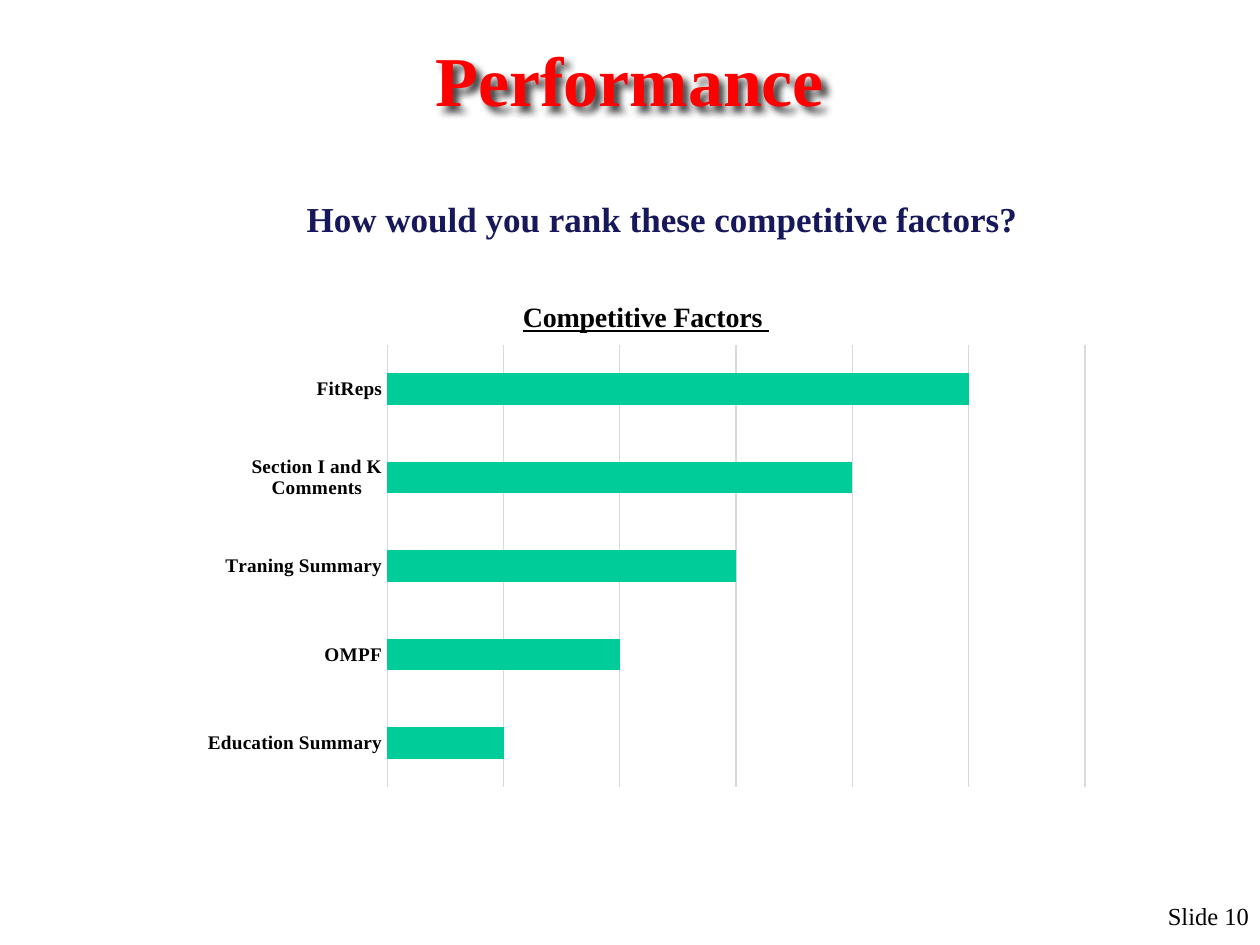
from lxml import etree
from pptx import Presentation
from pptx import util as u
from pptx.chart.data import CategoryChartData
from pptx.dml.color import RGBColor
from pptx.enum import chart as ch, text
from pptx.oxml import parse_xml
from pptx.oxml.ns import nsdecls, qn


def rgb(color):
    return RGBColor.from_string(color)


def set_layout(parent, index, **values):
    """Place a chart part by fractions of the chart's size."""
    for old in parent.findall(qn("c:layout")):
        parent.remove(old)
    layout = parse_xml(f"<c:layout {nsdecls('c')}><c:manualLayout/></c:layout>")
    for name, value in values.items():
        etree.SubElement(layout[0], qn(f"c:{name}")).set("val", str(value))
    parent.insert(index, layout)


class FactorSlide:
    FONT = "Times New Roman"
    BLACK, RED, DARK_RED = "000000", "FF0000", "8E0000"
    NAVY, GREEN, GRID = "17175C", "00CC99", "D9D9D9"

    def __init__(self, prs):
        self.slide = prs.slides.add_slide(prs.slide_layouts[5])

    def style(self, font, size, color, bold=False):
        font.name, font.size, font.bold = self.FONT, u.Pt(size), bold
        font.color.rgb = rgb(color)

    def title(self, wording, box):
        heading = self.slide.shapes.title
        heading.left, heading.top, heading.width, heading.height = map(u.Inches, box)
        frame = heading.text_frame
        frame.text = wording
        frame.vertical_anchor = text.MSO_ANCHOR.MIDDLE
        line = frame.paragraphs[0]
        line.alignment = text.PP_ALIGN.CENTER
        self.style(line.font, 40, self.RED, True)
        # Dark red letter outline and soft shadow
        line.runs[0]._r.get_or_add_rPr().insert(0, parse_xml(
            f'<a:ln {nsdecls("a")} w="9525"><a:solidFill>'
            f'<a:srgbClr val="{self.DARK_RED}"/></a:solidFill></a:ln>'))
        heading._element.spPr.append(parse_xml(
            f'<a:effectLst {nsdecls("a")}><a:outerShdw blurRad="50800" dist="50800" '
            'dir="2700000" algn="tl" rotWithShape="0"><a:srgbClr val="000000">'
            '<a:alpha val="75000"/></a:srgbClr></a:outerShdw></a:effectLst>'))

    def label(self, wording, box, size, color, bold=False, align=text.PP_ALIGN.LEFT):
        frame = self.slide.shapes.add_textbox(*map(u.Inches, box)).text_frame
        frame.word_wrap = True
        frame.text = wording
        line = frame.paragraphs[0]
        line.alignment = align
        self.style(line.font, size, color, bold)

    def bar_chart(self, heading, ranks, box):
        data = CategoryChartData()
        data.categories = list(ranks)
        data.add_series("Series 1", ranks.values())
        chart = self.slide.shapes.add_chart(
            ch.XL_CHART_TYPE.BAR_CLUSTERED, *map(u.Inches, box), data).chart
        chart.has_legend = False
        chart.font.name, chart.font.size = "Arial", u.Pt(10)
        chart.font.color.rgb = rgb(self.BLACK)

        # Heading
        chart.has_title = True
        frame = chart.chart_title.text_frame
        frame.text = heading
        for font in (frame.paragraphs[0].font, frame.paragraphs[0].runs[0].font):
            self.style(font, 16, self.BLACK, True)
            font.underline = True
        set_layout(chart.chart_title._element, 1,
                   xMode="edge", yMode="edge", x=0.36, y=0.04)
        set_layout(chart._chartSpace.chart.plotArea, 0, layoutTarget="inner",
                   xMode="edge", yMode="edge", x=0.217, y=0.136, w=0.764, h=0.842)

        # Bars
        plot = chart.plots[0]
        plot.gap_width = 182
        plot.vary_by_categories = False
        fill = plot.series[0].format.fill
        fill.solid()
        fill.fore_color.rgb = rgb(self.GREEN)

        # Axes
        factors, score = chart.category_axis, chart.value_axis
        factors.major_tick_mark = ch.XL_TICK_MARK.NONE
        self.style(factors.tick_labels.font, 11, self.BLACK, True)
        score.minimum_scale, score.maximum_scale, score.major_unit = 0, 120, 20
        score.has_major_gridlines = True
        score.visible = False
        for line in (factors.format.line, score.major_gridlines.format.line):
            line.color.rgb = rgb(self.GRID)
            line.width = u.Pt(0.75)


def main():
    prs = Presentation()
    prs.slide_width, prs.slide_height = u.Inches(10), u.Inches(7.5)
    page = FactorSlide(prs)

    # Title and question
    page.title("Performance", (0, 0.33, 10, 0.58))
    page.label("How would you rank these competitive factors?",
               (1.17, 1.52, 8.17, 0.73), 20, page.NAVY, True, text.PP_ALIGN.CENTER)

    # Slide number
    page.label("Slide 10", (9.17, 7.1, 2.39, 0.4), 14, page.BLACK)

    # Ranking, lowest factor first
    factors = ("Education Summary", "OMPF", "Traning Summary",
               "Section I and K Comments", "FitReps")
    ranks = {factor: 20 * place for place, factor in enumerate(factors, 1)}
    page.bar_chart("Competitive Factors ", ranks, (1.5, 2.17, 7.25, 4.17))

    prs.save("out.pptx")


if __name__ == "__main__":
    main()
